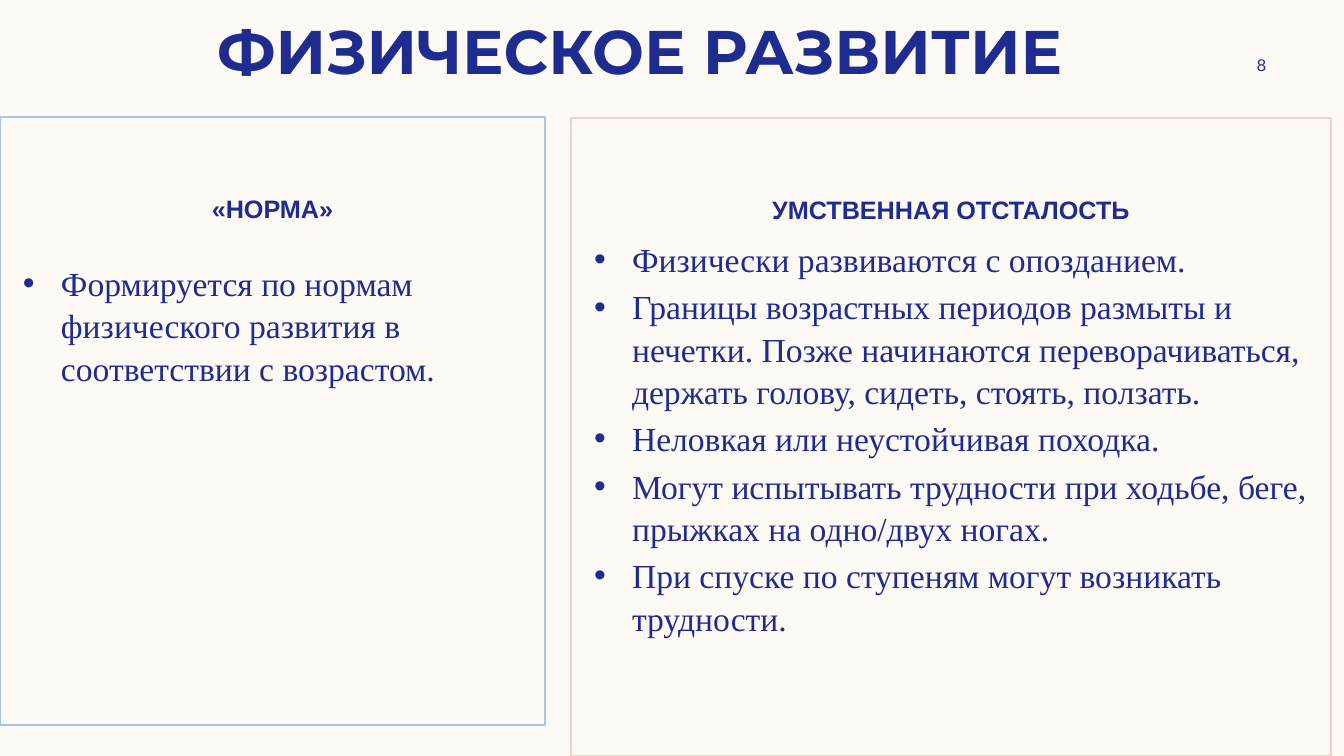
from lxml import etree
from pptx import Presentation
from pptx import util as u
from pptx.dml.color import RGBColor
from pptx.enum import shapes, text
from pptx.oxml.ns import qn

COLORS = {"paper": "FDFAF6", "ink": "1F2C8F", "blue": "AAC3E8", "pink": "F5CDCE"}
MID, LEFT = text.PP_ALIGN.CENTER, text.PP_ALIGN.LEFT
STYLES = {
    "title": ({"name": "Montserrat", "size": u.Pt(44), "bold": True}, {"alignment": MID}),
    "page": ({"name": "Arial", "size": u.Pt(12)}, {"alignment": MID}),
    "head": ({"name": "Arial", "size": u.Pt(18), "bold": True}, {"alignment": MID}),
    "list": (
        {"name": "Times New Roman", "size": u.Pt(24)},
        {"alignment": LEFT, "space_before": u.Pt(3.6), "line_spacing": 1.05},
    ),
}
LABELS = [
    ("title", "ФИЗИЧЕСКОЕ РАЗВИТИЕ", (52, 8, 1176, 85), "TOP"),
    ("page", "8", (1207, 50, 109, 30), "MIDDLE"),
]
PANELS = [
    {
        "head": "«НОРМА»",
        "line": "blue",
        "box": (0, 117, 545, 608),
        "area": (13, 256, 506, 450),
        "items": ["Формируется по нормам физического развития в соответствии с возрастом."],
    },
    {
        "head": "УМСТВЕННАЯ ОТСТАЛОСТЬ",
        "line": "pink",
        "box": (571, 118, 760, 638),
        "area": (584, 232, 747, 501),
        "items": [
            "Физически развиваются с опозданием.",
            "Границы возрастных периодов размыты и нечетки. Позже начинаются "
            "переворачиваться, держать голову, сидеть, стоять, ползать.",
            "Неловкая или неустойчивая походка.",
            "Могут испытывать трудности при ходьбе, беге, прыжках на одно/двух ногах.",
            "При спуске по ступеням могут возникать трудности.",
        ],
    },
]
INDENT = 38


def px(n):
    return round(n * 914400 / 100.8)


def color(name):
    return RGBColor.from_string(COLORS[name])


def assign(obj, values):
    for key, value in values.items():
        setattr(obj, key, value)


def bullet(para):
    props = para._p.get_or_add_pPr()
    props.set("marL", str(px(INDENT)))
    props.set("indent", str(-px(INDENT)))
    etree.SubElement(props, qn("a:buFont")).set("typeface", "Arial")
    etree.SubElement(props, qn("a:buChar")).set("char", "•")


def write(shape, lines, style, anchor="TOP", top=5):
    frame = shape.text_frame
    assign(frame, {
        "word_wrap": True,
        "vertical_anchor": text.MSO_ANCHOR[anchor],
        "margin_left": px(10),
        "margin_right": px(10),
        "margin_top": px(top),
        "margin_bottom": px(5),
    })
    font, layout = STYLES[style]
    for i, line in enumerate(lines):
        para = frame.add_paragraph() if i else frame.paragraphs[0]
        assign(para, layout)
        run = para.add_run()
        run.text = line
        assign(run.font, font)
        run.font.color.rgb = color("ink")
        if style == "list":
            bullet(para)


def textbox(slide, box, lines, style, anchor="TOP"):
    write(slide.shapes.add_textbox(*map(px, box)), lines, style, anchor)


def panel(slide, data):
    rect = slide.shapes.add_shape(shapes.MSO_SHAPE.RECTANGLE, *map(px, data["box"]))
    rect.shadow.inherit = False
    rect.fill.background()
    rect.line.color.rgb = color(data["line"])
    rect.line.width = u.Pt(1)
    write(rect, [data["head"]], "head", top=76)
    textbox(slide, data["area"], data["items"], "list")


def main():
    deck = Presentation()
    assign(deck, {"slide_width": px(1344), "slide_height": px(756)})
    slide = deck.slides.add_slide(deck.slide_layouts[6])
    slide.background.fill.solid()
    slide.background.fill.fore_color.rgb = color("paper")
    for style, line, box, anchor in LABELS:
        textbox(slide, box, [line], style, anchor)
    for data in PANELS:
        panel(slide, data)
    deck.save("out.pptx")


if __name__ == "__main__":
    main()
